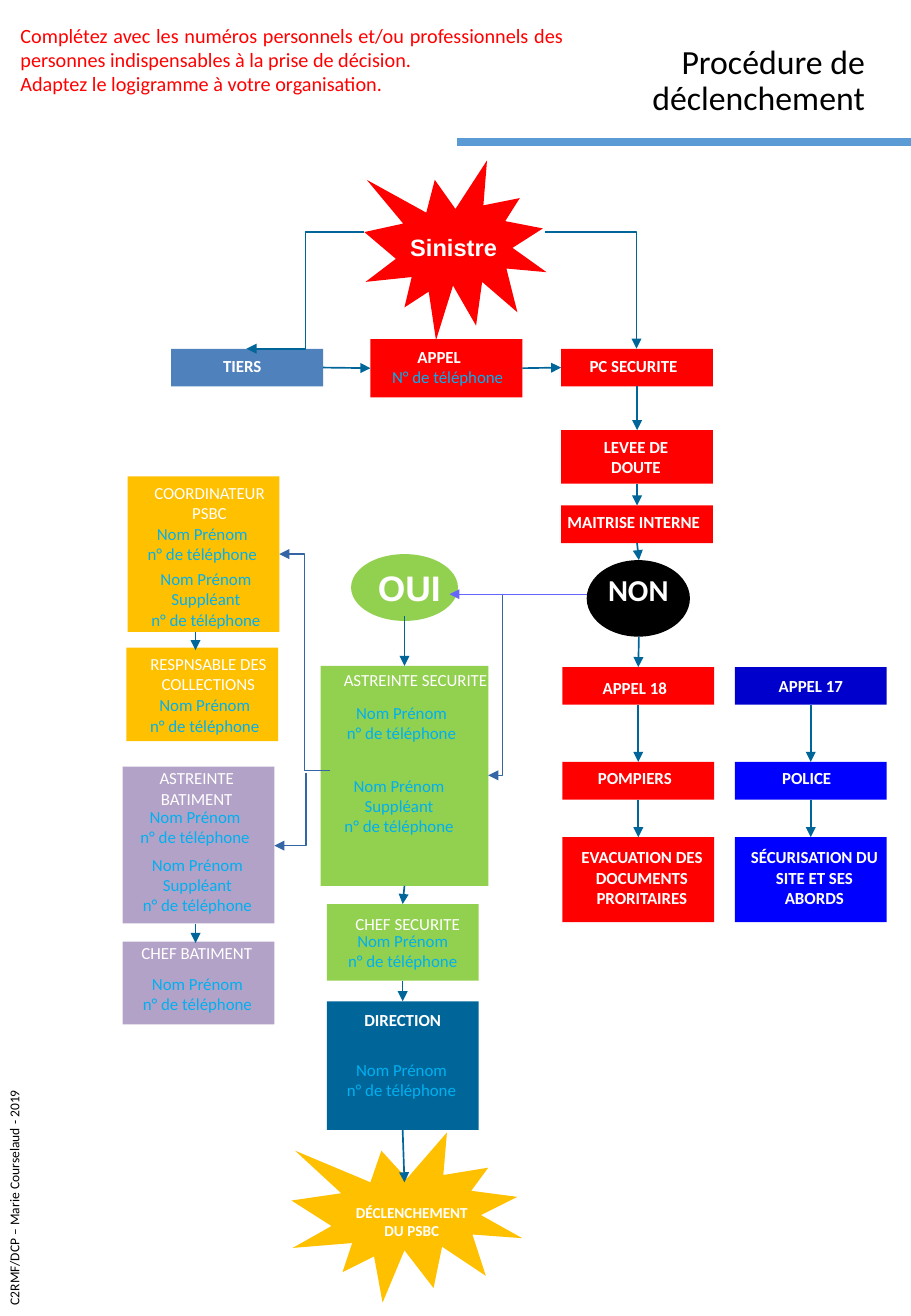
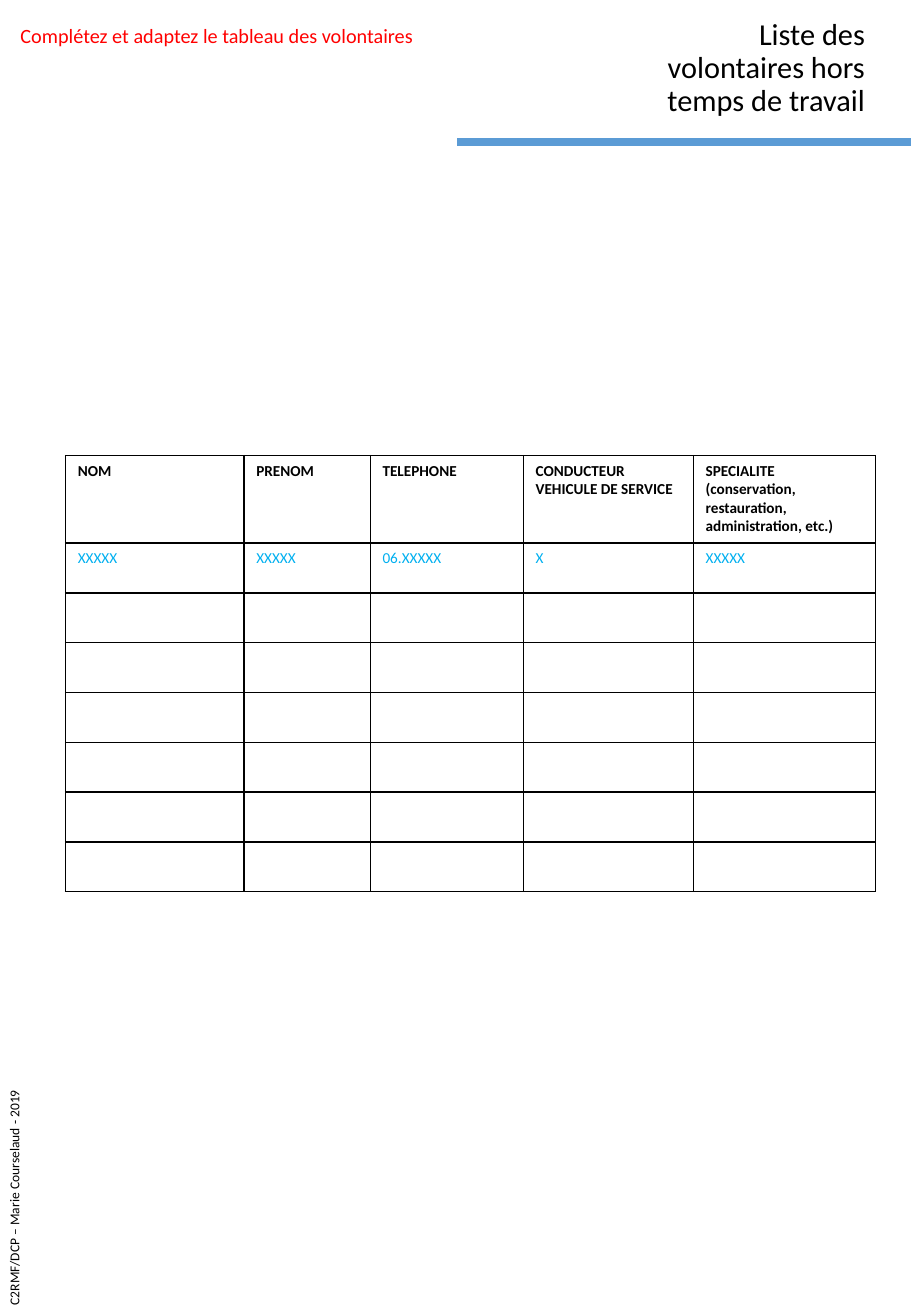
import pptx
import pptx.util
import pptx.dml.color
import pptx.enum.shapes
import pptx.enum.text
import pptx.oxml.ns
import lxml.etree

Inches, Pt = pptx.util.Inches, pptx.util.Pt
SHAPE = pptx.enum.shapes.MSO_SHAPE
LINK = pptx.enum.shapes.MSO_CONNECTOR
ALIGN = pptx.enum.text.PP_ALIGN
ANCHOR = pptx.enum.text.MSO_ANCHOR
qn = pptx.oxml.ns.qn

# Shared look
RED, GREEN, AMBER, MAUVE = "FF0000", "92D050", "FFC000", "B3A2C7"
NAVY, BLUE, TEAL, STEEL = "0000CC", "0000FF", "006699", "4F81BD"
SKY, BAND, THIN, VIOLET = "00B0F0", "5B9BD5", "3465A4", "6666FF"
BLACK, WHITE = "000000", "FFFFFF"
FONT = "Calibri"
FOOTER = "C2RMF/DCP – Marie Courselaud - 2019"

# Content of slide 1
FLOW = {
    "title": "Procédure de déclenchement",
    "size": 20,
    "note": ["Complétez avec les numéros personnels et/ou professionnels des "
             "personnes indispensables à la prise de décision.",
             "Adaptez le logigramme à votre organisation."],
    "note_w": 4.67,
}
WIDE = 1.25
# name: (label, fill, bold, (left, top, width, height), (left, top, right inset))
BOXES = {
    "tiers": ("TIERS", STEEL, True, (1.41, 2.87, WIDE, 0.31), (0.16, 0.06, 0.24)),
    "call": ("APPEL", RED, True, (3.05, 2.79, WIDE, 0.48), (0.12, 0.06, 0.24)),
    "post": ("PC SECURITE", RED, True, (4.62, 2.87, WIDE, 0.31), (0.17, 0.06, 0.23)),
    "doubt": ("LEVEE DE DOUTE", RED, True, (4.62, 3.54, WIDE, 0.44), (0.19, 0.05, 0.21)),
    "master": ("MAITRISE INTERNE", RED, True, (4.62, 4.16, WIDE, 0.31), (0.04, 0.05, 0.1)),
    "duty": ("ASTREINTE SECURITE", GREEN, False, (2.64, 5.48, 1.38, 1.81), (0.18, 0.03, 0)),
    "chief": ("CHEF SECURITE", GREEN, False, (2.69, 7.44, WIDE, 0.63), (0.11, 0.08, 0.03)),
    "coord": ("COORDINATEUR PSBC", AMBER, False, (1.05, 3.92, WIDE, 1.28), (0.1, 0.05, 0)),
    "stock": ("RESPNSABLE DES COLLECTIONS", AMBER, False, (1.04, 5.33, WIDE, 0.77), (0.1, 0.05, 0)),
    "head": ("DIRECTION", TEAL, True, (2.69, 8.24, WIDE, 1.06), (0.07, 0.07, 0.07)),
    "build": ("ASTREINTE BATIMENT", MAUVE, False, (1.01, 6.31, WIDE, 1.29), (0.1, 0.01, 0.13)),
    "works": ("CHEF BATIMENT", MAUVE, False, (1.01, 7.75, WIDE, 0.68), (0.1, 0.01, 0.13)),
    "call18": ("APPEL 18", RED, True, (4.63, 5.49, WIDE, 0.31), (0.04, 0.09, 0.1)),
    "fire": ("POMPIERS", RED, True, (4.63, 6.27, WIDE, 0.31), (0.04, 0.05, 0.1)),
    "clear": ("EVACUATION DES DOCUMENTS PRORITAIRES", RED, True,
              (4.63, 6.89, WIDE, 0.7), (0.1, 0.08, 0.04)),
    "call17": ("APPEL 17", NAVY, True, (6.05, 5.49, WIDE, 0.31), (0.07, 0.07, 0.07)),
    "police": ("POLICE", BLUE, True, (6.05, 6.27, WIDE, 0.31), (0.03, 0.05, 0.1)),
    "guard": ("SÉCURISATION DU SITE ET SES ABORDS", BLUE, True,
              (6.05, 6.89, WIDE, 0.7), (0.1, 0.08, 0.04)),
}
# Star outlines: label, fill, size, font, insets, points
STARS = [
    ("Sinistre", RED, 14, "Arial", (0.3, 0.6, 0.33),
     [(3.75, 1.72), (3.58, 1.48), (3.51, 1.75), (3.02, 1.48), (3.32, 1.84), (3, 1.91),
      (3.26, 2.13), (3.01, 2.32), (3.39, 2.28), (3.33, 2.53), (3.53, 2.4), (3.59, 2.8),
      (3.73, 2.35), (3.92, 2.68), (3.97, 2.32), (4.26, 2.57), (4.17, 2.21), (4.5, 2.24),
      (4.22, 2.04), (4.47, 1.88), (4.16, 1.82), (4.28, 1.63), (3.98, 1.69), (4.01, 1.32)]),
    ("DÉCLENCHEMENT DU PSBC", AMBER, 9, FONT, (0.5, 0.58, 0.42),
     [(3.35, 9.7), (3.14, 9.47), (3.05, 9.73), (2.43, 9.47), (2.81, 9.82), (2.4, 9.88),
      (2.73, 10.09), (2.41, 10.27), (2.9, 10.23), (2.82, 10.47), (3.08, 10.34), (3.15, 10.72),
      (3.33, 10.29), (3.57, 10.6), (3.64, 10.26), (4, 10.5), (3.89, 10.16), (4.3, 10.19),
      (3.96, 10), (4.26, 9.85), (3.88, 9.8), (4.02, 9.61), (3.65, 9.67), (3.68, 9.32)]),
]
# Arrow ends: (box, side) joins, (x, y) is free; sides are 0 top, 1 left, 2 bottom, 3 right
CHAINS = [("post", "doubt", "master"), ("call18", "fire", "clear"),
          ("call17", "police", "guard"), ("duty", "chief", "head")]
ARROWS = [((a, 2), (b, 0)) for row in CHAINS for a, b in zip(row, row[1:])] + [
    (("tiers", 3), ("call", 1)), (("call", 3), ("post", 1)),
    (("master", 2), (5.26, 4.61)), ((5.26, 5.24), ("call18", 0)),
    ((3.33, 5.07), ("duty", 0)), (("head", 2), (3.33, 9.73)),
    ((1.61, 5.2), (1.61, 5.35)), ((1.61, 7.6), (1.61, 7.76)),
]
# Bent arrows: start, finish, colour, width, preset, arrow end
BENDS = [
    ((3, 1.91), (2.03, 2.87), TEAL, 1, "bentConnector3", "tailEnd"),
    ((4.49, 1.91), (5.24, 2.87), TEAL, 1, "bentConnector2", "tailEnd"),
    ((2.72, 6.34), (2.3, 4.56), THIN, 0.75, "bentConnector3", "tailEnd"),
    ((2.26, 6.96), (2.52, 6.36), THIN, 0.75, "bentConnector2", "headEnd"),
    ((4.26, 4.89), (4.02, 6.38), THIN, 0.75, "bentConnector3", "tailEnd"),
]
PERSON = ["Nom Prénom", "n° de téléphone"]
DEPUTY = ["Nom Prénom", "Suppléant", "n° de téléphone"]
CONTACTS = [
    (3.02, 2.97, ["N° de téléphone"]),
    (2.64, 5.73, PERSON), (2.62, 6.33, DEPUTY), (2.65, 7.61, PERSON),
    (1, 4.26, PERSON), (1.03, 4.63, DEPUTY), (1.02, 5.67, PERSON),
    (0.94, 6.59, PERSON), (0.96, 6.98, DEPUTY), (0.96, 7.96, PERSON),
    (2.64, 8.67, PERSON),
]

# Content of slide 2
LIST = {
    "title": "Liste des volontaires hors temps de travail",
    "size": 18,
    "note": ["Complétez et adaptez le tableau des volontaires"],
    "note_w": 3.69,
}
HEADS = ["NOM", "PRENOM", "TELEPHONE", "CONDUCTEUR VEHICULE DE SERVICE",
         "SPECIALITE (conservation, restauration, administration, etc.)"]
SAMPLE = ["XXXXX", "XXXXX", "06.XXXXX", "X", "XXXXX"]
SPARE = 6
COLS = [1.47, 1.04, 1.26, 1.4, 1.5]
HEAD_H, ROW_H = 0.72, 0.41


def tint(code):
    return pptx.dml.color.RGBColor.from_string(code)


def write(frame, lines, size, color, bold=False, align=ALIGN.CENTER, font=FONT):
    frame.text = "\n".join(lines)
    for para in frame.paragraphs:
        para.alignment = align
        for run in para.runs:
            run.font.name, run.font.size, run.font.bold = font, Pt(size), bold
            run.font.color.rgb = tint(color)


def add_text(slide, rect, lines, size, color, **style):
    box = slide.shapes.add_textbox(*map(Inches, rect))
    box.text_frame.word_wrap = True
    write(box.text_frame, lines, size, color, **style)
    return box


def dress(shape, fill, label, size, insets, bold=True, font=FONT):
    """Flat fill, no outline, label at the top."""
    shape.shadow.inherit = False
    shape.fill.solid()
    shape.fill.fore_color.rgb = tint(fill)
    shape.line.fill.background()
    frame = shape.text_frame
    frame.word_wrap = True
    frame.vertical_anchor = ANCHOR.TOP
    frame.margin_left, frame.margin_top, frame.margin_right = map(Inches, insets)
    frame.margin_bottom = 0
    write(frame, [label], size, WHITE, bold, font=font)


def add_line(slide, start, stop, color, width, end="tailEnd", preset=None, boxes=None):
    kind = LINK.ELBOW if preset else LINK.STRAIGHT
    spots = [(0, 0) if isinstance(spot[0], str) else spot for spot in (start, stop)]
    line = slide.shapes.add_connector(kind, *[Inches(n) for spot in spots for n in spot])
    for spot, join in ((start, line.begin_connect), (stop, line.end_connect)):
        if isinstance(spot[0], str):
            join(boxes[spot[0]], spot[1])
    line.line.color.rgb = tint(color)
    line.line.width = Pt(width)
    props = line._element.spPr
    if preset:
        props.find(qn("a:prstGeom")).set("prst", preset)
    if end:
        lxml.etree.SubElement(props.find(qn("a:ln")), qn("a:" + end), type="triangle")
    lxml.etree.SubElement(props, qn("a:effectLst"))


def add_page(deck, data):
    """Title, band, red note and side footer."""
    slide = deck.slides.add_slide(deck.slide_layouts[6])
    title = add_text(slide, (5.02, 0.22, 2.2, 0.8), [data["title"]], data["size"], BLACK,
                     align=ALIGN.RIGHT)
    title.text_frame.vertical_anchor = ANCHOR.BOTTOM
    title.text_frame.paragraphs[0].line_spacing = 0.9
    add_line(slide, (7.5, 1.17), (3.76, 1.17), BAND, 4.75, end=None)
    note_h = 0.71 if len(data["note"]) > 1 else 0.3
    add_text(slide, (0.07, 0.14, data["note_w"], note_h), data["note"], 12, RED,
             align=ALIGN.JUSTIFY)
    foot = add_text(slide, (-1, 9.6, 2.24, 0.24), [FOOTER], 8, BLACK, align=ALIGN.LEFT)
    foot.rotation = 270
    return slide


def add_flow(slide):
    # Stars
    for label, fill, size, font, insets, dots in STARS:
        pts = [(Inches(x), Inches(y)) for x, y in dots]
        pen = slide.shapes.build_freeform(*pts[0])
        pen.add_line_segments(pts[1:], close=True)
        dress(pen.convert_to_shape(), fill, label, size, insets, font=font)
    # Boxes
    boxes = {}
    for name, (label, fill, bold, rect, insets) in BOXES.items():
        boxes[name] = slide.shapes.add_shape(SHAPE.RECTANGLE, *map(Inches, rect))
        dress(boxes[name], fill, label, 10, insets, bold)
    # Yes and no
    yes = slide.shapes.add_shape(SHAPE.OVAL, *map(Inches, (2.89, 4.56, 0.88, 0.55)))
    dress(yes, GREEN, "OUI", 21, (0.08, 0, 0), font="Arial")
    yes.text_frame.word_wrap = False
    yes.text_frame.vertical_anchor = ANCHOR.MIDDLE
    no = slide.shapes.add_shape(SHAPE.OVAL, *map(Inches, (4.83, 4.61, 0.85, 0.63)))
    dress(no, BLACK, "NON", 18, (0, 0, 0))
    # Arrows
    for start, stop in ARROWS:
        add_line(slide, start, stop, TEAL, 1, boxes=boxes)
    for start, stop, color, width, preset, end in BENDS:
        add_line(slide, start, stop, color, width, end, preset)
    add_line(slide, (4.83, 4.89), (3.7, 4.89), VIOLET, 0.5)
    # Contacts
    for left, top, lines in CONTACTS:
        add_text(slide, (left, top, 1.33, 0.1 + 0.17 * len(lines)), lines, 10, SKY)


def add_grid(slide):
    rows = [HEADS, SAMPLE] + [[""] * len(COLS)] * SPARE
    size = (sum(COLS), HEAD_H + ROW_H * (len(rows) - 1))
    table = slide.shapes.add_table(len(rows), len(COLS), Inches(0.54), Inches(3.75),
                                   *map(Inches, size)).table
    table.first_row = table.horz_banding = False
    for col, width in zip(table.columns, COLS):
        col.width = Inches(width)
    for i, texts in enumerate(rows):
        table.rows[i].height = Inches(ROW_H if i else HEAD_H)
        for j, text in enumerate(texts):
            cell = table.cell(i, j)
            write(cell.text_frame, [text], 9, SKY if i else BLACK, i == 0, ALIGN.LEFT)
            # Borders come before the fill in the cell properties
            props = cell._tc.get_or_add_tcPr()
            for side in ("lnL", "lnR", "lnT", "lnB"):
                edge = lxml.etree.SubElement(props, qn("a:" + side), w=str(Pt(1)))
                solid = lxml.etree.SubElement(edge, qn("a:solidFill"))
                lxml.etree.SubElement(solid, qn("a:srgbClr"), val=BLACK)
            cell.fill.background()


def main():
    deck = pptx.Presentation()
    deck.slide_width, deck.slide_height = Inches(7.5), Inches(10.83)
    add_flow(add_page(deck, FLOW))
    add_grid(add_page(deck, LIST))
    deck.save("out.pptx")


if __name__ == "__main__":
    main()
